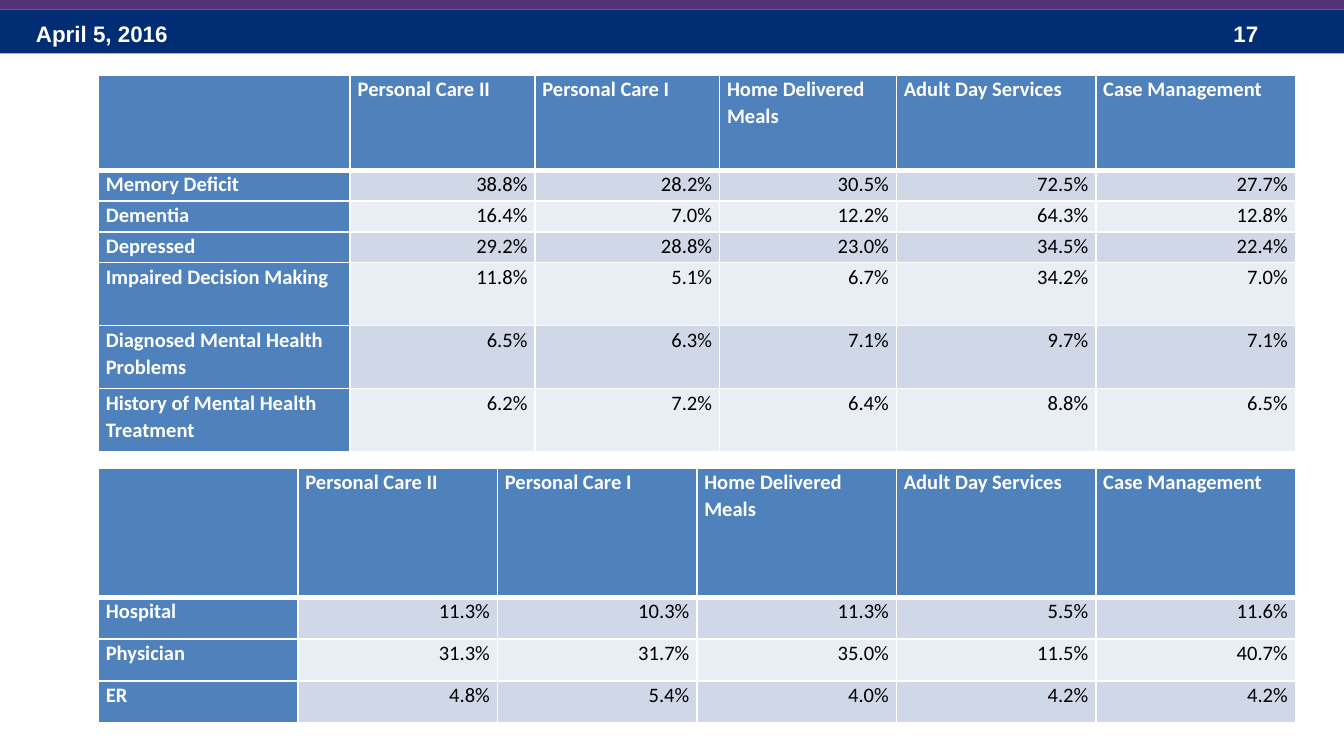
from dataclasses import dataclass

from lxml.etree import SubElement
from pptx import Presentation
from pptx.dml.color import RGBColor
from pptx.enum.shapes import MSO_SHAPE
from pptx.enum.text import MSO_ANCHOR, PP_ALIGN
from pptx.oxml.ns import qn
from pptx.util import Cm, Pt

DATE, PAGE = "April 5, 2016", "17"
SERVICES = ["Personal Care II", "Personal Care I", "Home Delivered Meals",
            "Adult Day Services", "Case Management"]
CONDITIONS = [
    ("Memory Deficit", 38.8, 28.2, 30.5, 72.5, 27.7),
    ("Dementia", 16.4, 7.0, 12.2, 64.3, 12.8),
    ("Depressed", 29.2, 28.8, 23.0, 34.5, 22.4),
    ("Impaired Decision Making", 11.8, 5.1, 6.7, 34.2, 7.0),
    ("Diagnosed Mental Health Problems", 6.5, 6.3, 7.1, 9.7, 7.1),
    ("History of Mental Health Treatment", 6.2, 7.2, 6.4, 8.8, 6.5),
]
VISITS = [
    ("Hospital", 11.3, 10.3, 11.3, 5.5, 11.6),
    ("Physician", 31.3, 31.7, 35.0, 11.5, 40.7),
    ("ER", 4.8, 5.4, 4.0, 4.2, 4.2),
]
# Lengths in cm
TABLES = [
    {"top": 1.42, "data": CONDITIONS, "cols": [4.76, 3.49, 3.49, 3.34, 3.77, 3.77],
     "rows": [1.8] + [0.58] * 3 + [1.19] * 3},
    {"top": 8.84, "data": VISITS, "cols": [3.77] * 6, "rows": [2.44] + [0.79] * 3},
]
SLIDE_W, SLIDE_H = 25.4, 14.28
TABLE_LEFT = 1.86
BAR_TOP, BAR_H = 0.18, 0.83


@dataclass(frozen=True)
class Theme:
    navy: str = "002D73"
    purple: str = "553278"
    head: str = "4F81BD"
    bands: tuple = ("D0D8E8", "E9EDF4")
    light: str = "FFFFFF"
    dark: str = "000000"
    bar_font: str = "Arial"
    bar_size: int = 12
    table_font: str = "Calibri"
    table_size: int = 11


THEME = Theme()


def add_run(p, text, font, size, color, bold):
    r = p.add_run()
    r.text = text
    r.font.name, r.font.size, r.font.bold = font, Pt(size), bold
    r.font.color.rgb = RGBColor.from_string(color)


def add_bar(s, top, height, color):
    sp = s.shapes.add_shape(MSO_SHAPE.RECTANGLE, 0, Cm(top), Cm(SLIDE_W), Cm(height))
    sp.shadow.inherit = False
    sp.fill.solid()
    sp.fill.fore_color.rgb = RGBColor.from_string(color)
    sp.line.fill.background()


def add_bar_text(s, left, width, text):
    tf = s.shapes.add_textbox(Cm(left), Cm(0.25), Cm(width), Cm(0.76)).text_frame
    tf.word_wrap = True
    tf.vertical_anchor = MSO_ANCHOR.MIDDLE
    add_run(tf.paragraphs[0], text, THEME.bar_font, THEME.bar_size, THEME.light, True)


def set_borders(cell, widths):
    """Draw the left, right, top and bottom borders, widths in points."""
    tcPr = cell._tc.get_or_add_tcPr()
    for side, width in zip(("L", "R", "T", "B"), widths):
        ln = SubElement(tcPr, qn(f"a:ln{side}"), w=str(Pt(width)))
        SubElement(SubElement(ln, qn("a:solidFill")), qn("a:srgbClr"), val=THEME.light)


def format_cell(cell, text, row, col):
    is_head = row == 0 or col == 0
    set_borders(cell, (1, 1, 3 if row == 1 else 1, 3 if row == 0 else 1))
    cell.fill.solid()
    color = THEME.head if is_head else THEME.bands[(row - 1) % 2]
    cell.fill.fore_color.rgb = RGBColor.from_string(color)
    cell.margin_left = cell.margin_right = Cm(0.14)
    cell.margin_top = cell.margin_bottom = 0
    p = cell.text_frame.paragraphs[0]
    p.line_spacing = 1.07
    p.alignment = PP_ALIGN.LEFT if is_head else PP_ALIGN.RIGHT
    if text:
        add_run(p, text, THEME.table_font, THEME.table_size,
                THEME.light if is_head else THEME.dark, is_head)


def add_data_table(s, top, data, cols, rows):
    table = s.shapes.add_table(len(rows), len(cols), Cm(TABLE_LEFT), Cm(top),
                               Cm(sum(cols)), Cm(sum(rows))).table
    for column, width in zip(table.columns, cols):
        column.width = Cm(width)
    for row, height in zip(table.rows, rows):
        row.height = Cm(height)
    lines = [["", *SERVICES]]
    lines += [[name, *(f"{v:.1f}%" for v in values)] for name, *values in data]
    for i, line in enumerate(lines):
        for j, text in enumerate(line):
            format_cell(table.cell(i, j), text, i, j)


def main():
    prs = Presentation()
    prs.slide_width, prs.slide_height = Cm(SLIDE_W), Cm(SLIDE_H)
    s = prs.slides.add_slide(prs.slide_layouts[6])
    add_bar(s, BAR_TOP, BAR_H, THEME.navy)
    add_bar_text(s, 0.43, 5.92, DATE)
    add_bar_text(s, 23.06, 1.9, PAGE)
    add_bar(s, -0.05, BAR_TOP + 0.05, THEME.purple)
    for spec_of_table in TABLES:
        add_data_table(s, **spec_of_table)
    prs.save("out.pptx")


if __name__ == "__main__":
    main()
